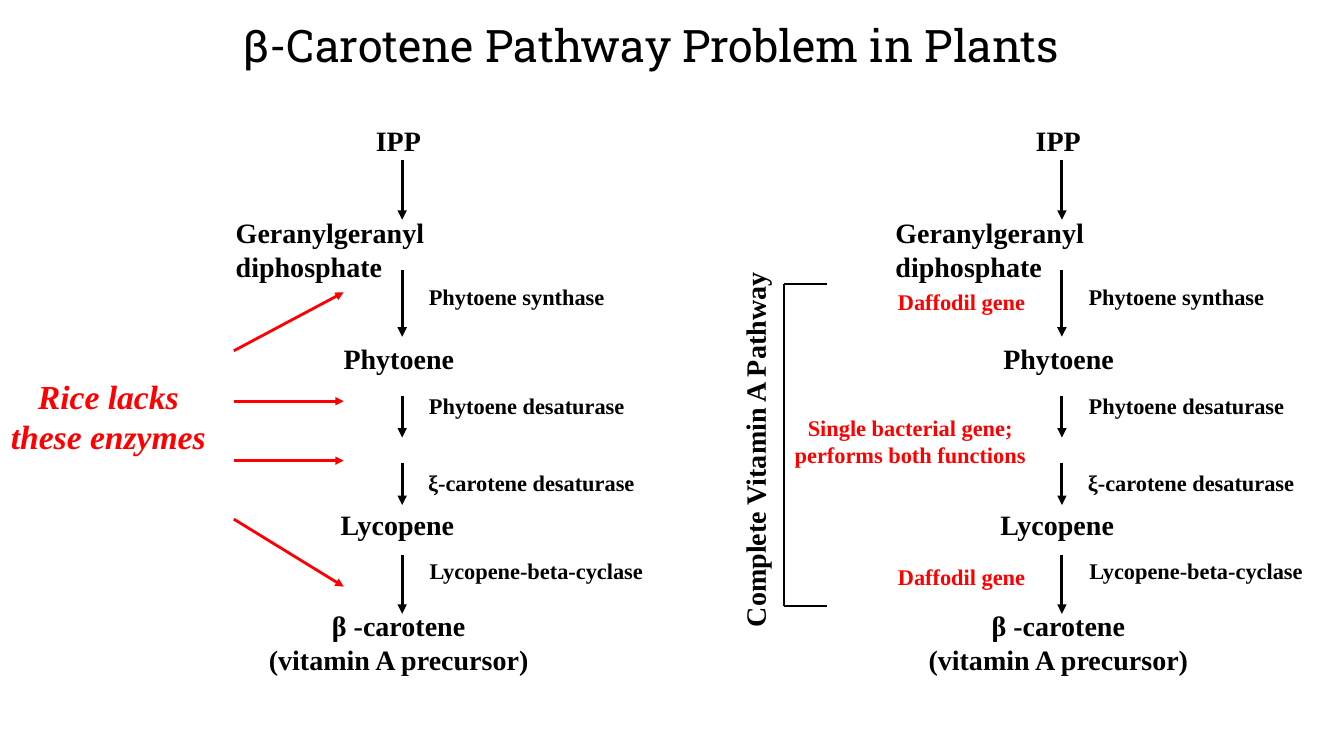
from dataclasses import dataclass
from typing import Optional

from lxml.etree import SubElement
from pptx import Presentation
from pptx.dml.color import RGBColor
from pptx.enum.shapes import MSO_CONNECTOR as Connector
from pptx.enum.text import MSO_ANCHOR as Anchor, PP_ALIGN as Align
from pptx.oxml.ns import qn
from pptx.util import Inches, Pt

BLACK = RGBColor(0x00, 0x00, 0x00)
RED = RGBColor(0xFF, 0x00, 0x00)
SERIF = "Times New Roman"
SLAB = "Roboto Slab"

# Grid: ten columns and ten rows to the inch
CELL = Inches(0.1)
COLUMNS, ROWS = 133.33, 75
PATHWAY_SHIFT = 65.45


@dataclass(frozen=True)
class Label:
    text: str
    column: float
    row: float
    columns: float
    rows: float
    size: int = 20
    color: RGBColor = BLACK
    align: Align = Align.LEFT
    font: str = SERIF
    bold: bool = True
    italic: bool = False
    wraps: bool = False
    anchor: Anchor = Anchor.TOP
    right_inset: float = 1
    rotation: int = 0


@dataclass(frozen=True)
class Line:
    start: tuple[float, float]
    end: tuple[float, float]
    color: RGBColor = BLACK
    width: float = 2.25
    arrow: bool = True


TITLE = Label("β-Carotene Pathway Problem in Plants", 23.2, 1.3, 86.4, 6.4,
              size=32, font=SLAB, bold=False, wraps=True)

# One pathway, placed for the left half
COMPOUNDS = [
    Label("IPP", 36.3, 11.8, 6.5, 4.3),
    Label("Geranylgeranyl diphosphate", 22.4, 20.9, 35.9, 4.3,
          wraps=True, right_inset=12),
    Label("Phytoene", 33.1, 33.4, 13, 4.3),
    Label("Lycopene", 32.8, 49.9, 13.4, 4.3),
    Label("β -carotene\n(vitamin A precursor)", 25.5, 59.9, 28.1, 7.7,
          align=Align.CENTER),
]
ENZYMES = [
    Label("Phytoene synthase", 41.5, 27.6, 19.5, 3.7, 16, align=Align.CENTER),
    Label("Phytoene desaturase", 41.5, 38.4, 21.5, 3.7, 16, align=Align.CENTER),
    Label("ξ-carotene desaturase", 41.5, 44.7, 23.4, 5, 16,
          wraps=True, anchor=Anchor.BOTTOM),
    Label("Lycopene-beta-cyclase", 41.5, 54.8, 23.4, 3.7, 16, align=Align.CENTER),
]
STEP_COLUMN = 39.9
STEP_ROWS = [(15.9, 21.8), (26.8, 33.4), (39.3, 43.4), (45.9, 50.1), (55.1, 60.9)]

# What rice is missing
RICE_NOTE = Label("Rice lacks\nthese enzymes", 0, 36.8, 21.5, 9.1, 24, RED,
                  Align.CENTER, italic=True)
RICE_ROWS = [(34.8, 29), (39.8, 39.8), (45.7, 45.7), (51.5, 58.2)]
RICE_START, RICE_END = 23.2, 34.1

# Genes that complete the pathway
GENES = [
    Label("Daffodil gene", 88.1, 28.1, 14.7, 3.7, 16, RED),
    Label("Single bacterial gene;\nperforms both functions", 77.8, 40.6, 25, 6.4,
          16, RED, Align.CENTER),
    Label("Daffodil gene", 88.1, 55.4, 14.7, 3.7, 16, RED),
]
BRACKET_NOTE = Label("Complete Vitamin A Pathway", 56.5, 39.3, 40.1, 7.7,
                     align=Align.JUSTIFY, wraps=True, rotation=270)
BRACKET_LEFT, BRACKET_RIGHT = 77.8, 82
BRACKET_TOP, BRACKET_BOTTOM = 28.2, 60.1


def cells(count: float) -> int:
    return round(count * CELL)


def draw_label(slide, label: Label, shift: float = 0) -> None:
    box = slide.shapes.add_textbox(cells(label.column + shift), cells(label.row),
                                   cells(label.columns), cells(label.rows))
    box.rotation = label.rotation
    frame = box.text_frame
    frame.word_wrap = label.wraps
    frame.vertical_anchor = label.anchor
    frame.margin_right = cells(label.right_inset)
    frame.text = label.text
    for paragraph in frame.paragraphs:
        paragraph.alignment = label.align
        for run in paragraph.runs:
            run.font.name = label.font
            run.font.size = Pt(label.size)
            run.font.bold = label.bold
            run.font.italic = label.italic
            run.font.color.rgb = label.color


def draw_line(slide, line: Line) -> None:
    points = [cells(value) for value in (*line.start, *line.end)]
    connector = slide.shapes.add_connector(Connector.STRAIGHT, *points)
    connector.line.color.rgb = line.color
    connector.line.width = Pt(line.width)
    if line.arrow:
        SubElement(connector.line._get_or_add_ln(), qn("a:tailEnd"), type="triangle")
    SubElement(connector._element.spPr, qn("a:effectLst"))


def draw_pathway(slide, shift: Optional[float] = 0) -> None:
    for label in COMPOUNDS + ENZYMES:
        draw_label(slide, label, shift)
    column = STEP_COLUMN + shift
    for top, bottom in STEP_ROWS:
        draw_line(slide, Line((column, top), (column, bottom)))


def draw_bracket(slide) -> None:
    corners = [(BRACKET_RIGHT, BRACKET_TOP), (BRACKET_LEFT, BRACKET_TOP),
               (BRACKET_LEFT, BRACKET_BOTTOM), (BRACKET_RIGHT, BRACKET_BOTTOM)]
    for start, end in zip(corners, corners[1:]):
        draw_line(slide, Line(start, end, width=1.75, arrow=False))


def main() -> None:
    presentation = Presentation()
    presentation.slide_width = cells(COLUMNS)
    presentation.slide_height = cells(ROWS)
    slide = presentation.slides.add_slide(presentation.slide_layouts[6])

    # Title and both pathways
    draw_label(slide, TITLE)
    for shift in (0, PATHWAY_SHIFT):
        draw_pathway(slide, shift)

    # Left: missing enzymes
    draw_label(slide, RICE_NOTE)
    for start_row, end_row in RICE_ROWS:
        draw_line(slide, Line((RICE_START, start_row), (RICE_END, end_row), RED, 2))

    # Right: added genes and bracket
    for label in [*GENES, BRACKET_NOTE]:
        draw_label(slide, label)
    draw_bracket(slide)

    presentation.save("out.pptx")


if __name__ == "__main__":
    main()
